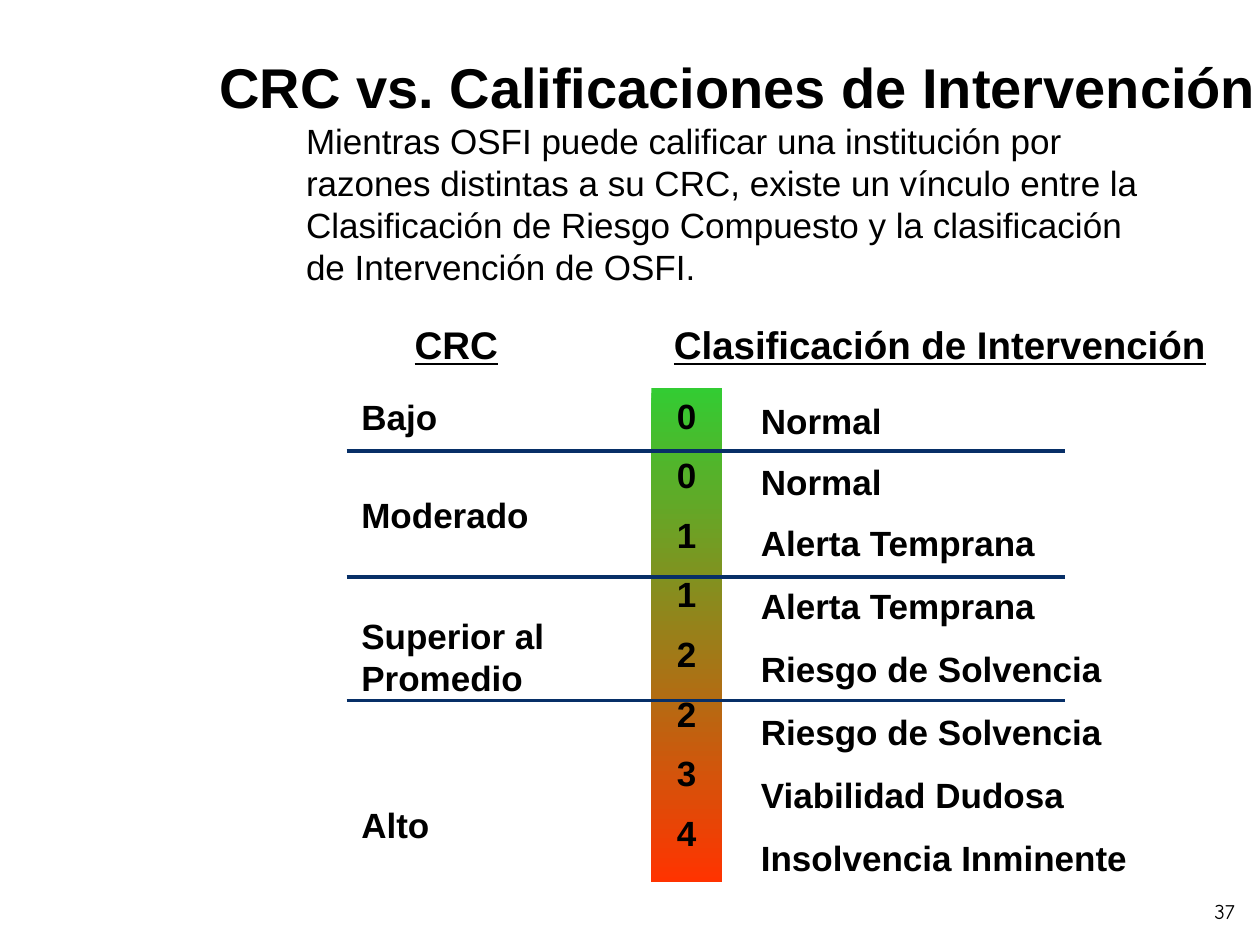
from lxml import etree
from pptx import Presentation
from pptx import util as u
from pptx.dml.color import RGBColor
from pptx.enum import shapes, text
from pptx.oxml.ns import qn

BLACK, NAVY, GREEN, RED = "000000", "072F67", "33CC33", "FF3300"
LEFT, CENTER, RIGHT = text.PP_ALIGN.LEFT, text.PP_ALIGN.CENTER, text.PP_ALIGN.RIGHT
TOP, BOTTOM = text.MSO_ANCHOR.TOP, text.MSO_ANCHOR.BOTTOM

CRC_LEVELS = ["Bajo", "Moderado", "Superior al Promedio", "Alto"]
CRC_GAPS = [32, 45, 60, 0]
STAGES = [
    (0, "Normal", 11),
    (0, "Normal", 11),
    (1, "Alerta Temprana", 12),
    (1, "Alerta Temprana", 12),
    (2, "Riesgo de Solvencia", 12),
    (2, "Riesgo de Solvencia", 12),
    (3, "Viabilidad Dudosa", 12),
    (4, "Insolvencia Inminente", 0),
]
DIVIDER_TOPS = [257.8, 329.8, 400.3]


def color(value):
    return RGBColor.from_string(value)


def write(shape, lines, size=20, font="Arial", bold=True, underline=False,
          align=LEFT, anchor=TOP, gaps=None, margins=(7.2, 3.6, 7.2, 3.6)):
    frame = shape.text_frame
    frame.word_wrap = True
    frame.vertical_anchor = anchor
    (frame.margin_left, frame.margin_top,
     frame.margin_right, frame.margin_bottom) = map(u.Pt, margins)
    frame.text = "\n".join(lines)
    for paragraph, gap in zip(frame.paragraphs, gaps or [0] * len(lines)):
        paragraph.alignment = align
        paragraph.space_after = u.Pt(gap)
        paragraph.font.name = font
        paragraph.font.size = u.Pt(size)
        paragraph.font.bold = bold
        paragraph.font.underline = underline
        paragraph.font.color.rgb = color(BLACK)


def add_text(slide, box, lines, **style):
    write(slide.shapes.add_textbox(*map(u.Pt, box)), lines, **style)


def add_scale(slide, box, numbers):
    shape = slide.shapes.add_shape(shapes.MSO_SHAPE.RECTANGLE, *map(u.Pt, box))
    shape.shadow.inherit = False
    shape.line.fill.background()
    shape.fill.gradient()
    shape.fill.gradient_angle = 270
    for stop, value, position in zip(shape.fill.gradient_stops, (GREEN, RED), (0, 1)):
        stop.color.rgb = color(value)
        stop.position = position
    write(shape, numbers, align=CENTER, gaps=[10] * len(numbers))


def add_divider(slide, left, right, top):
    line = slide.shapes.add_connector(
        shapes.MSO_CONNECTOR.STRAIGHT, u.Pt(left), u.Pt(top), u.Pt(right), u.Pt(top))
    line.line.color.rgb = color(NAVY)
    line.line.width = u.Pt(2)
    etree.SubElement(line._element.spPr, qn("a:effectLst"))


def main():
    presentation = Presentation()
    presentation.slide_width, presentation.slide_height = u.Pt(720), u.Pt(540)
    slide = presentation.slides.add_slide(presentation.slide_layouts[6])

    add_text(slide, (684, 506, 21.6, 21.6), ["37"], size=12, font="Comic Neue",
             bold=False, align=RIGHT, anchor=BOTTOM, margins=(0, 0, 0, 0))
    add_text(slide, (167.8, 59.8, 504, 108),
             ["Mientras OSFI puede calificar una institución por razones distintas "
              "a su CRC, existe un vínculo entre la Clasificación de Riesgo Compuesto "
              "y la clasificación de Intervención de OSFI."],
             bold=False, anchor=BOTTOM)
    add_text(slide, (115.9, 26.6, 612, 46), ["CRC vs. Calificaciones de Intervención"],
             size=32, align=CENTER)

    numbers, names, gaps = zip(*STAGES)
    add_text(slide, (199.4, 222.5, 172.8, 275.8), CRC_LEVELS, gaps=CRC_GAPS)
    add_scale(slide, (372.2, 221.8, 40.3, 282.2), [str(number) for number in numbers])
    add_text(slide, (427.7, 228.2, 231.8, 273.6), names, gaps=gaps,
             margins=(7.2, 0, 7.2, 3.6))
    for top in DIVIDER_TOPS:
        add_divider(slide, 198, 608.4, top)

    add_text(slide, (378, 180, 327.6, 33.8), ["Clasificación de Intervención"],
             size=22, underline=True)
    add_text(slide, (167.8, 180, 185.8, 33.8), ["CRC"],
             size=22, underline=True, align=CENTER)

    presentation.save("out.pptx")


if __name__ == "__main__":
    main()
